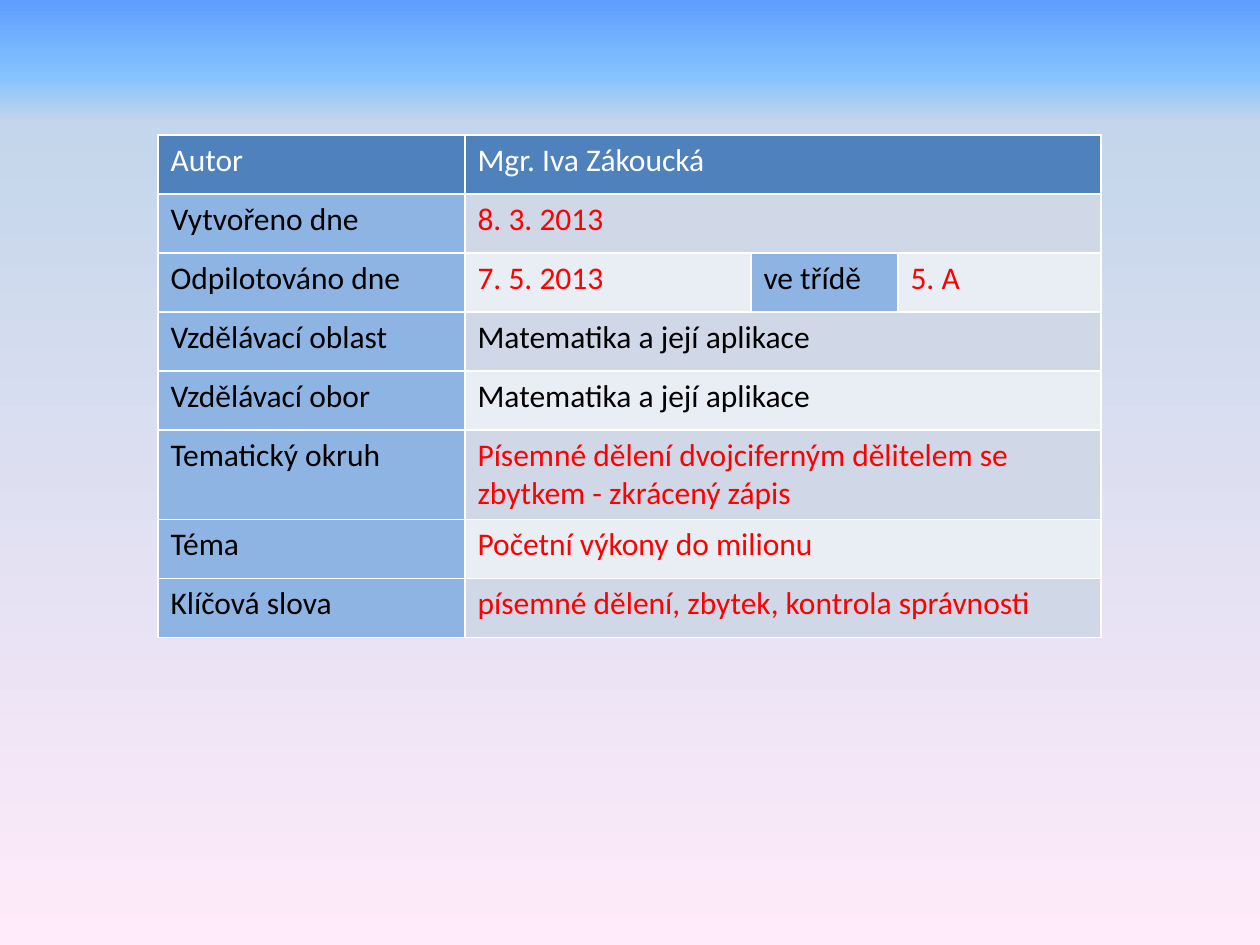
from dataclasses import dataclass

from lxml import etree
from pptx import Presentation
from pptx.dml.color import RGBColor
from pptx.oxml.ns import qn
from pptx.util import Emu, Pt

EMU_PER_PX = 914400 / 126
BLANK_LAYOUT = 6
BORDER_TAGS = ("a:lnL", "a:lnR", "a:lnT", "a:lnB")


@dataclass(frozen=True)
class Theme:
    font: str = "Calibri"
    text_size: int = 18
    border_width: int = 1
    border: str = "FFFFFF"
    header_text: str = "FFFFFF"
    header_fill: str = "4F81BD"
    label_fill: str = "8EB4E3"
    band_fills: tuple = ("E9EDF4", "D0D8E8")
    fixed: str = "000000"
    entered: str = "FF0000"
    background: tuple = ((0, "5E9EFF"), (8, "85C2FF"), (13, "C4D6EB"), (100, "FFEBFA"))


THEME = Theme()

TABLE_LEFT, TABLE_TOP, ROW_HEIGHT = 158, 135, 59
COLUMN_WIDTHS = (307, 286, 147, 203)
ROWS = (
    (("Autor", THEME.header_text), ("Mgr. Iva Zákoucká", THEME.header_text)),
    (("Vytvořeno dne", THEME.fixed), ("8. 3. 2013", THEME.entered)),
    (("Odpilotováno dne", THEME.fixed), ("7. 5. 2013", THEME.entered),
     ("ve třídě", THEME.fixed), ("5. A", THEME.entered)),
    (("Vzdělávací oblast", THEME.fixed), ("Matematika a její aplikace", THEME.fixed)),
    (("Vzdělávací obor", THEME.fixed), ("Matematika a její aplikace", THEME.fixed)),
    (("Tematický okruh", THEME.fixed),
     ("Písemné dělení dvojciferným dělitelem se zbytkem - zkrácený zápis", THEME.entered)),
    (("Téma", THEME.fixed), ("Početní výkony do milionu", THEME.entered)),
    (("Klíčová slova", THEME.fixed),
     ("písemné dělení, zbytek, kontrola správnosti", THEME.entered)),
)


def px(length):
    return Emu(round(length * EMU_PER_PX))


def set_background(slide):
    fill = slide.background.fill
    fill.gradient()
    fill.gradient_angle = 270
    stop_list = next(slide.element.iter(qn("a:gsLst")))
    for stop in list(stop_list):
        stop_list.remove(stop)
    for percent, color in THEME.background:
        stop = etree.SubElement(stop_list, qn("a:gs"), pos=str(percent * 1000))
        etree.SubElement(stop, qn("a:srgbClr"), val=color)


def set_borders(cell):
    properties = cell._tc.get_or_add_tcPr()
    for position, tag in enumerate(BORDER_TAGS):
        line = etree.Element(qn(tag), w=str(Pt(THEME.border_width)))
        fill = etree.SubElement(line, qn("a:solidFill"))
        etree.SubElement(fill, qn("a:srgbClr"), val=THEME.border)
        properties.insert(position, line)


def cell_fill(row, column):
    if row == 0:
        return THEME.header_fill
    return THEME.band_fills[row % 2] if column % 2 else THEME.label_fill


def write_cell(cell, text, color):
    cell.text_frame.text = text
    font = cell.text_frame.paragraphs[0].runs[0].font
    font.name = THEME.font
    font.size = Pt(THEME.text_size)
    font.bold = False
    font.color.rgb = RGBColor.from_string(color)


def add_record_table(slide):
    table = slide.shapes.add_table(
        len(ROWS), len(COLUMN_WIDTHS), px(TABLE_LEFT), px(TABLE_TOP),
        px(sum(COLUMN_WIDTHS)), px(ROW_HEIGHT * len(ROWS))).table
    for column, width in zip(table.columns, COLUMN_WIDTHS):
        column.width = px(width)
    last_column = len(COLUMN_WIDTHS) - 1
    for row, entries in enumerate(ROWS):
        table.rows[row].height = px(ROW_HEIGHT)
        for column in range(len(COLUMN_WIDTHS)):
            cell = table.cell(row, column)
            cell.fill.solid()
            cell.fill.fore_color.rgb = RGBColor.from_string(cell_fill(row, column))
            set_borders(cell)
        if len(entries) == 2:
            table.cell(row, 1).merge(table.cell(row, last_column))
        for column, (text, color) in enumerate(entries):
            write_cell(table.cell(row, column), text, color)


def main():
    presentation = Presentation()
    presentation.slide_width = px(1260)
    presentation.slide_height = px(945)
    slide = presentation.slides.add_slide(presentation.slide_layouts[BLANK_LAYOUT])
    set_background(slide)
    add_record_table(slide)
    presentation.save("out.pptx")


if __name__ == "__main__":
    main()
